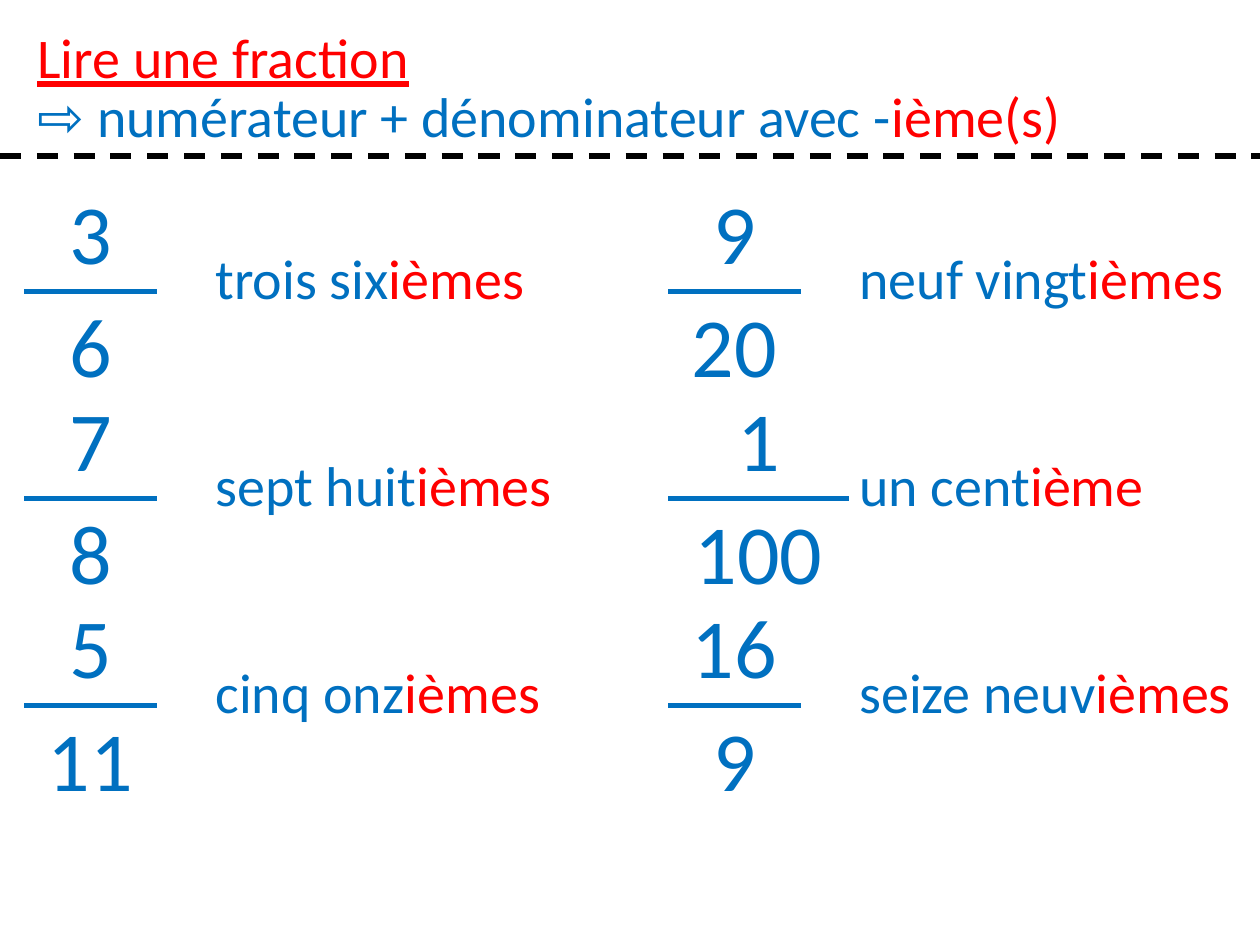
from lxml import etree
from pptx import Presentation
from pptx import util as u
from pptx.dml.color import RGBColor
from pptx.enum import dml, shapes, text
from pptx.oxml import ns

BLUE = RGBColor(0x00, 0x70, 0xC0)
RED = RGBColor(0xFF, 0x00, 0x00)
BLACK = RGBColor(0x00, 0x00, 0x00)
FONT = "Calibri"
PX = 914400 // 126
SLIDE_W, SLIDE_H = 1260, 945

TITLE = "Lire une fraction"
RULE = ("⇨ numérateur + dénominateur avec -", "ième(s)")
COLUMNS = [
    [("3", "6", "trois six", "ièmes"),
     ("7", "8", "sept huit", "ièmes"),
     ("5", "11", "cinq onz", "ièmes")],
    [("9", "20", "neuf vingt", "ièmes"),
     ("1", "100", "un cent", "ième"),
     ("16", "9", "seize neuv", "ièmes")],
]

LEFT, TOP = 25, 178
COLUMN_STEP, ROW_STEP = 644, 207
BAR_W, WIDE_BAR_W, HALF_H = 131, 179, 113
READING_DX, READING_DY = 178, 59
READING_W, LINE_H = 412, 81
SEPARATOR_Y = 156


def px(*lengths):
    return [u.Emu(length * PX) for length in lengths]


def add_words(slide, box, runs, underline=None):
    frame = slide.shapes.add_textbox(*px(*box)).text_frame
    frame.word_wrap = True
    paragraph = frame.paragraphs[0]
    paragraph.font.name, paragraph.font.size = FONT, u.Pt(32)
    paragraph.font.underline = underline
    for words, color in runs:
        run = paragraph.add_run()
        run.text = words
        run.font.color.rgb = color


def add_bar(cell, side):
    bar = etree.Element(ns.qn(f"a:{side}"), w=str(u.Pt(3)))
    fill = etree.SubElement(bar, ns.qn("a:solidFill"))
    etree.SubElement(fill, ns.qn("a:srgbClr"), val=str(BLUE))
    cell._tc.get_or_add_tcPr().insert(0, bar)


def add_fraction(slide, x, y, numerator, denominator):
    width = WIDE_BAR_W if len(denominator) > 2 else BAR_W
    table = slide.shapes.add_table(2, 1, *px(x, y, width, 2 * HALF_H)).table
    table.first_row = table.horz_banding = False
    for row, (number, side) in enumerate([(numerator, "lnB"), (denominator, "lnT")]):
        cell = table.cell(row, 0)
        cell.text = number
        cell.fill.background()
        add_bar(cell, side)
        paragraph = cell.text_frame.paragraphs[0]
        paragraph.alignment = text.PP_ALIGN.CENTER
        paragraph.font.name, paragraph.font.size = FONT, u.Pt(48)
        paragraph.font.color.rgb = BLUE


def add_separator(slide):
    separator = slide.shapes.add_connector(
        shapes.MSO_CONNECTOR.STRAIGHT, *px(0, SEPARATOR_Y, SLIDE_W, SEPARATOR_Y))
    separator.line.color.rgb = BLACK
    separator.line.width = u.Pt(3)
    separator.line.dash_style = dml.MSO_LINE.DASH
    etree.SubElement(separator._element.spPr, ns.qn("a:effectLst"))


def main():
    """Build the slide on reading fractions aloud."""
    deck = Presentation()
    deck.slide_width, deck.slide_height = px(SLIDE_W, SLIDE_H)
    slide = deck.slides.add_slide(deck.slide_layouts[6])
    add_words(slide, (LEFT, 16, 496, LINE_H), [(TITLE, RED)], underline=True)
    add_words(slide, (LEFT, 75, 1131, LINE_H), zip(RULE, (BLUE, RED)))
    add_separator(slide)
    for column, fractions in enumerate(COLUMNS):
        x = LEFT + column * COLUMN_STEP
        for row, (numerator, denominator, stem, ending) in enumerate(fractions):
            y = TOP + row * ROW_STEP
            add_fraction(slide, x, y, numerator, denominator)
            add_words(slide, (x + READING_DX, y + READING_DY, READING_W, LINE_H),
                      [(stem, BLUE), (ending, RED)])
    deck.save("out.pptx")


if __name__ == "__main__":
    main()
